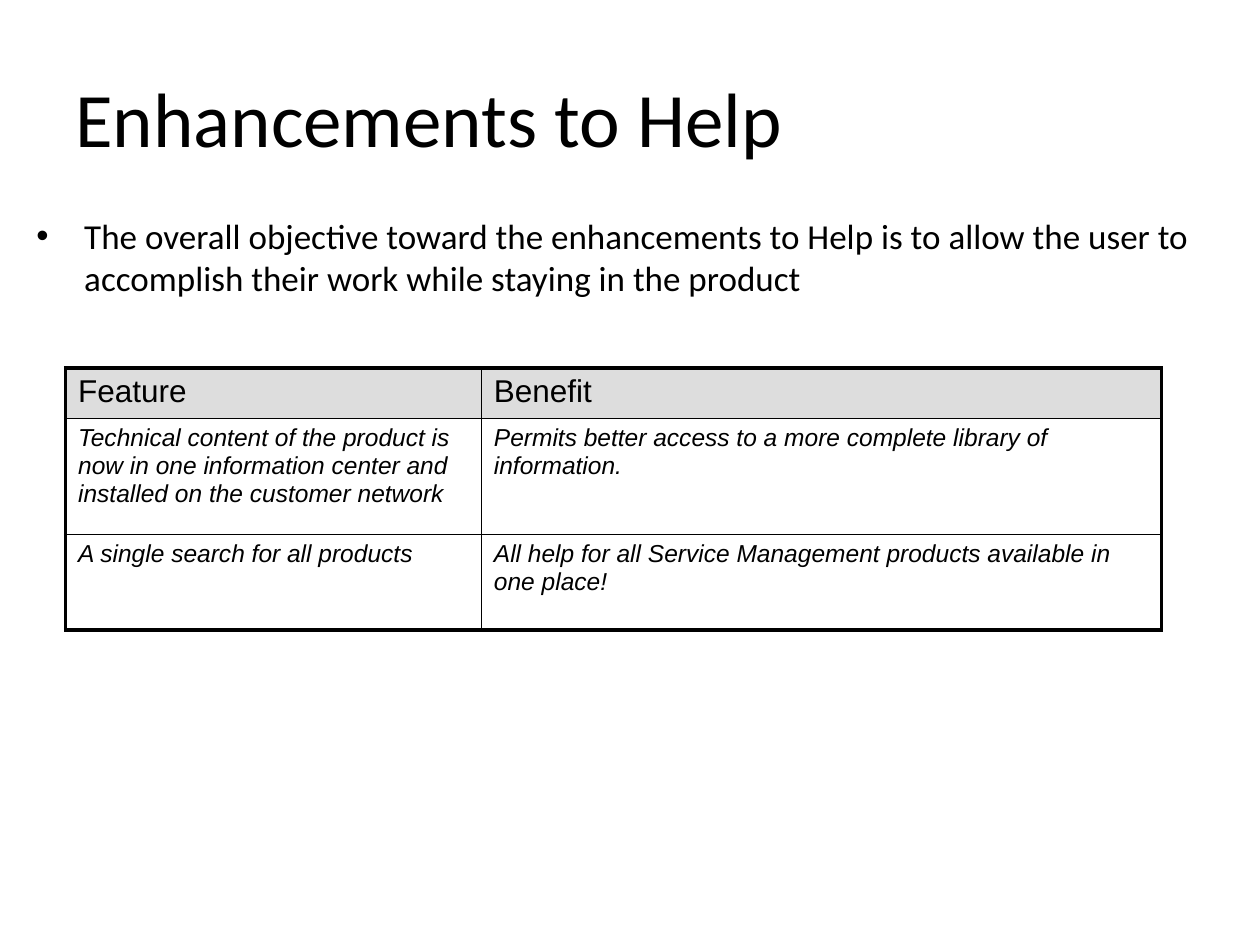
from pptx import Presentation
from pptx.dml.color import RGBColor
from pptx.enum.text import MSO_ANCHOR
from pptx.oxml.ns import qn
from pptx.util import Inches, Pt
from lxml.etree import SubElement

COLORS = {"text": "000000", "border": "000000", "header": "DDDDDD", "body": "FFFFFF"}
OUTER, INNER = 2.25, 1  # border widths in points

COLUMN_WIDTHS = [3.3, 5.4]
ROW_HEIGHTS = [0.39, 0.92, 0.76]
ROWS = [
    ["Feature", "Benefit"],
    ["Technical content of the product is now in one information center "
     "and installed on the customer network",
     "Permits better access to a more complete library of information."],
    ["A single search for all products",
     "All help for all Service Management products available in one place!"],
]


def color(name):
    return RGBColor.from_string(COLORS[name])


def style_paragraph(paragraph, font_name, size, italic=False):
    font = paragraph.font
    font.name, font.size, font.italic = font_name, Pt(size), italic
    font.color.rgb = color("text")


def add_text(slide, box, text, size, anchor=MSO_ANCHOR.TOP):
    shape = slide.shapes.add_textbox(*map(Inches, box))
    frame = shape.text_frame
    frame.word_wrap = True
    frame.vertical_anchor = anchor
    paragraph = frame.paragraphs[0]
    paragraph.text = text
    style_paragraph(paragraph, "Calibri", size)
    return paragraph


def add_bullet(paragraph, indent):
    properties = paragraph._p.get_or_add_pPr()
    properties.set("marL", str(Inches(indent)))
    properties.set("indent", str(-Inches(indent)))
    SubElement(properties, qn("a:buFont"), typeface="Arial")
    SubElement(properties, qn("a:buChar"), char="•")


def set_borders(cell, widths):
    """Draw the left, right, top and bottom borders, in that order."""
    properties = cell._tc.get_or_add_tcPr()
    for position, (side, width) in enumerate(zip("LRTB", widths)):
        line = properties.makeelement(qn(f"a:ln{side}"), {"w": str(Pt(width))})
        fill = SubElement(line, qn("a:solidFill"))
        SubElement(fill, qn("a:srgbClr"), val=COLORS["border"])
        properties.insert(position, line)


def add_feature_table(slide, left, top):
    row_count, column_count = len(ROWS), len(COLUMN_WIDTHS)
    table = slide.shapes.add_table(
        row_count, column_count, Inches(left), Inches(top),
        Inches(sum(COLUMN_WIDTHS)), Inches(sum(ROW_HEIGHTS))).table
    for column, width in zip(table.columns, COLUMN_WIDTHS):
        column.width = Inches(width)
    for row, height in zip(table.rows, ROW_HEIGHTS):
        row.height = Inches(height)

    for r, texts in enumerate(ROWS):
        is_header = r == 0
        for c, text in enumerate(texts):
            cell = table.cell(r, c)
            cell.text = text
            style_paragraph(cell.text_frame.paragraphs[0], "Arial",
                            18 if is_header else 14, italic=not is_header)
            cell.fill.solid()
            cell.fill.fore_color.rgb = color("header" if is_header else "body")
            on_edge = (c == 0, c == column_count - 1, r == 0, r == row_count - 1)
            set_borders(cell, [OUTER if edge else INNER for edge in on_edge])


def main():
    presentation = Presentation()
    presentation.slide_width, presentation.slide_height = Inches(10), Inches(7.5)
    slide = presentation.slides.add_slide(presentation.slide_layouts[6])

    # Title
    add_text(slide, (0.5, 0.3, 9, 1.25), "Enhancements to Help", 44, MSO_ANCHOR.MIDDLE)

    # Objective
    objective = add_text(
        slide, (0.19, 1.65, 9.62, 5.49),
        "The overall objective toward the enhancements to Help is to allow the user "
        "to accomplish their work while staying in the product", 20)
    add_bullet(objective, 0.38)

    # Features and benefits
    add_feature_table(slide, 0.52, 2.92)

    presentation.save("out.pptx")


if __name__ == "__main__":
    main()
